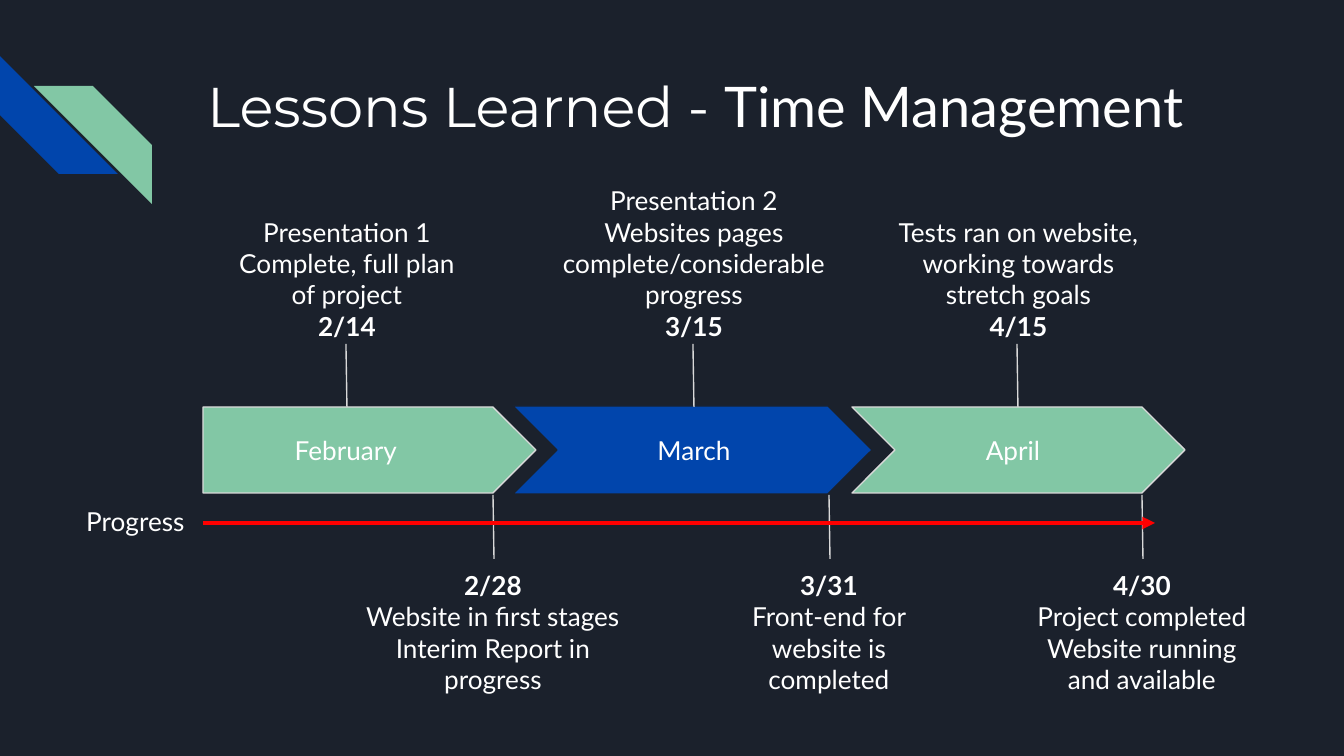
import lxml.etree
import pptx
import pptx.dml.color
import pptx.enum.shapes
import pptx.enum.text
import pptx.oxml.ns
import pptx.util

SHAPES = pptx.enum.shapes.MSO_SHAPE
ALIGN = pptx.enum.text.PP_ALIGN
ANCHOR = pptx.enum.text.MSO_ANCHOR


class TimelineSlide:
    """Holds the style and the slide, and draws each kind of element in px."""

    SCALE = 9144000 / 1344
    COLORS = {
        "background": "1B212C",
        "blue": "0145AC",
        "green": "82C7A5",
        "gray": "D9D9D9",
        "red": "FF0000",
        "white": "FFFFFF",
    }

    def __init__(self, presentation):
        presentation.slide_width = self.emu(1344)
        presentation.slide_height = self.emu(756)
        self.slide = presentation.slides.add_slide(presentation.slide_layouts[6])
        fill = self.slide.background.fill
        fill.solid()
        fill.fore_color.rgb = self.color("background")

    def emu(self, px):
        return pptx.util.Emu(round(px * self.SCALE))

    def color(self, name):
        return pptx.dml.color.RGBColor.from_string(self.COLORS[name])

    def shape(self, kind, box, fill, line=None, rotation=0, flip=False):
        shape = self.slide.shapes.add_shape(kind, *map(self.emu, box))
        shape.shadow.inherit = False
        shape.adjustments[0] = 0.5
        shape.rotation = rotation
        shape.fill.solid()
        shape.fill.fore_color.rgb = self.color(fill)
        if line:
            shape.line.color.rgb = self.color(line)
            shape.line.width = pptx.util.Pt(0.75)
        else:
            shape.line.fill.background()
        if flip:
            shape.element.spPr.get_or_add_xfrm().set("flipH", "1")

    def text(self, box, paragraphs, size=14, align=ALIGN.CENTER, anchor=ANCHOR.TOP):
        shape = self.slide.shapes.add_textbox(*map(self.emu, box))
        frame = shape.text_frame
        frame.word_wrap = True
        frame.vertical_anchor = anchor
        frame.margin_left = frame.margin_right = pptx.util.Inches(0.1)
        frame.margin_top = frame.margin_bottom = pptx.util.Inches(0.1)
        for index, runs in enumerate(paragraphs):
            paragraph = frame.add_paragraph() if index else frame.paragraphs[0]
            paragraph.alignment = align
            for words, font, bold in runs:
                run = paragraph.add_run()
                run.text = words
                run.font.name = font
                run.font.size = pptx.util.Pt(size)
                run.font.bold = bold
                run.font.color.rgb = self.color("white")

    def line(self, start, end, color="gray", width=0.75, arrow=False):
        connector = self.slide.shapes.add_connector(
            pptx.enum.shapes.MSO_CONNECTOR.STRAIGHT, *map(self.emu, start + end)
        )
        connector.line.color.rgb = self.color(color)
        connector.line.width = pptx.util.Pt(width)
        if arrow:
            outline = connector.line._get_or_add_ln()
            lxml.etree.SubElement(outline, pptx.oxml.ns.qn("a:tailEnd"), type="triangle")
        lxml.etree.SubElement(connector.element.spPr, pptx.oxml.ns.qn("a:effectLst"))

    def milestone(self, center, width, date, notes, above):
        day = [[(date, "Lato", True)]]
        details = [[(note, "Lato", False)] for note in notes]
        left = center - width // 2
        if above:
            self.line((center, 407), (center - 1, 344))
            self.text((left, 169, width, 186), details + day, anchor=ANCHOR.BOTTOM)
        else:
            self.line((center, 495), (center + 1, 559))
            self.text((left, 556, width, 153), day + details)


def main():
    presentation = pptx.Presentation()
    timeline = TimelineSlide(presentation)

    timeline.shape(SHAPES.DIAGONAL_STRIPE, (0, 56, 118, 118), "blue", rotation=270)
    timeline.shape(SHAPES.DIAGONAL_STRIPE, (34, 86, 118, 118), "green", flip=True)
    title = [("Lessons Learned - ", "Montserrat", False), ("Time Management", "Lato", False)]
    timeline.text((194, 58, 1035, 134), [title], size=30, align=ALIGN.LEFT)

    months = [
        ("February", 346, SHAPES.PENTAGON, (203, 407, 333, 86), "green", "gray"),
        ("March", 694, SHAPES.CHEVRON, (513, 406, 359, 88), "blue", "background"),
        ("April", 1013, SHAPES.CHEVRON, (852, 407, 333, 86), "green", "gray"),
    ]
    for name, center, kind, box, fill, line in months:
        timeline.shape(kind, box, fill, line)
        timeline.text((center - 80, 421, 160, 59), [[(name, "Lato", False)]])

    milestones = [
        (347, 258, "2/14", ["Presentation 1", "Complete, full plan of project"], True),
        (694, 296, "3/15", ["Presentation 2", "Websites pages complete/considerable progress"], True),
        (1018, 273, "4/15", ["Tests ran on website, working towards stretch goals"], True),
        (493, 296, "2/28", ["Website in first stages", "Interim Report in progress"], False),
        (829, 258, "3/31", ["Front-end for website is completed"], False),
        (1142, 258, "4/30", ["Project completed", "Website running and available"], False),
    ]
    for milestone in milestones:
        timeline.milestone(*milestone)

    timeline.line((203, 523), (1155, 523), "red", 2.25, arrow=True)
    timeline.text((73, 492, 191, 59), [[("Progress", "Lato", False)]], align=ALIGN.LEFT)
    presentation.save("out.pptx")


if __name__ == "__main__":
    main()
